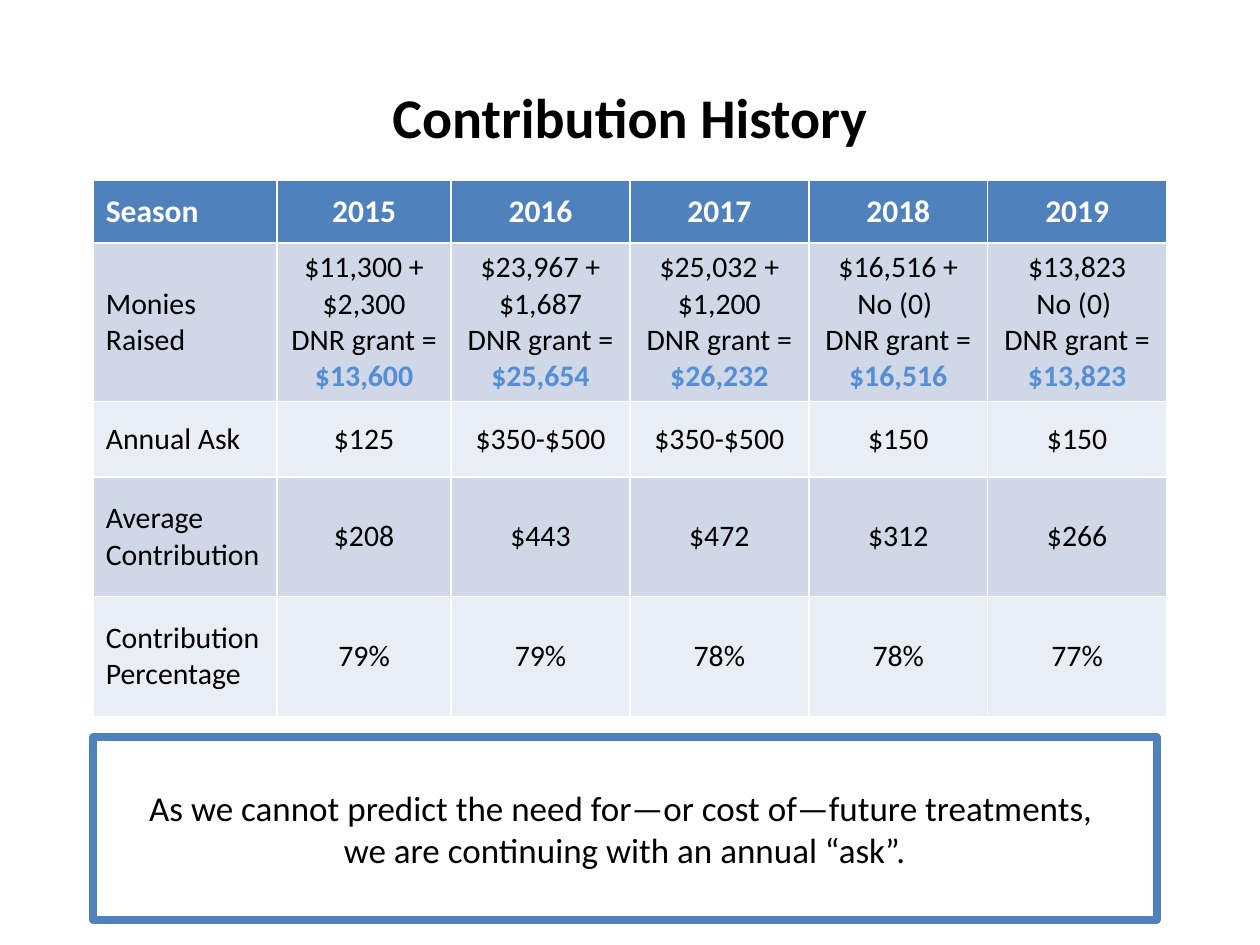
import pptx
import pptx.dml.color
import pptx.enum.shapes
import pptx.enum.text
import pptx.oxml
import pptx.oxml.ns
import pptx.util
from dataclasses import dataclass

Inches = pptx.util.Inches
ALIGN = pptx.enum.text.PP_ALIGN
MIDDLE = pptx.enum.text.MSO_ANCHOR.MIDDLE


@dataclass(frozen=True)
class Theme:
    font: str = "Calibri"
    ink: str = "000000"
    white: str = "FFFFFF"
    blue: str = "4F81BD"
    total: str = "558ED5"
    bands: tuple = ("D0D8E8", "E9EDF4")
    title_size: int = 32
    note_size: int = 20
    header_size: int = 18
    body_size: int = 17


theme = Theme()


def rgb(value):
    return pptx.dml.color.RGBColor.from_string(value)


def add_run(paragraph, text, size, color=theme.ink, bold=False):
    run = paragraph.add_run()
    run.text = text
    run.font.name = theme.font
    run.font.size = pptx.util.Pt(size)
    run.font.bold = bold
    run.font.color.rgb = rgb(color)


deck = pptx.Presentation()
deck.slide_width, deck.slide_height = Inches(10), Inches(7.5)
slide = deck.slides.add_slide(deck.slide_layouts[5])

# Title
title = slide.shapes.title
title.left, title.top = Inches(0.5), Inches(0.3)
title.width, title.height = Inches(9), Inches(1.25)
title.text_frame.vertical_anchor = MIDDLE
heading = title.text_frame.paragraphs[0]
heading.alignment = ALIGN.CENTER
add_run(heading, "Contribution History", theme.title_size, bold=True)

# Note below the table
note = slide.shapes.add_shape(pptx.enum.shapes.MSO_SHAPE.RECTANGLE,
                              Inches(0.74), Inches(5.85), Inches(8.44), Inches(1.45))
note.shadow.inherit = False
note.fill.background()
note.line.color.rgb = rgb(theme.blue)
note.line.width = pptx.util.Pt(4.5)
outline = note._element.spPr.find(pptx.oxml.ns.qn("a:ln"))
outline.append(pptx.oxml.parse_xml(f'<a:round {pptx.oxml.ns.nsdecls("a")}/>'))
note_text = note.text_frame
note_text.word_wrap = True
note_text.vertical_anchor = MIDDLE
note_lines = ["As we cannot predict the need for—or cost of—future treatments, ",
              "we are continuing with an annual “ask”."]
for i, line in enumerate(note_lines):
    paragraph = note_text.paragraphs[0] if i == 0 else note_text.add_paragraph()
    paragraph.alignment = ALIGN.CENTER
    add_run(paragraph, line, theme.note_size)

# Table contents: each cell is a list of lines; the grant line ends with the season total
GRANT = "DNR grant = "
raised = [(["$11,300 + $2,300"], "$13,600"),
          (["$23,967 + $1,687"], "$25,654"),
          (["$25,032 + $1,200"], "$26,232"),
          (["$16,516 +", "No (0) "], "$16,516"),
          (["$13,823", "No (0) "], "$13,823")]
rows = [
    ["Season", "2015", "2016", "2017", "2018", "2019"],
    ["Monies Raised"] + raised,
    ["Annual Ask", "$125", "$350-$500", "$350-$500", "$150", "$150"],
    ["Average Contribution", "$208", "$443", "$472", "$312", "$266"],
    ["Contribution Percentage", "79%", "79%", "78%", "78%", "77%"],
]
column_widths = [1.46, 1.38] + [1.42] * 4
row_heights = [0.5, 1.23, 0.6, 0.95, 0.95]

# Table: the default style supplies the white rules between cells
history = slide.shapes.add_table(len(rows), len(column_widths), Inches(0.74), Inches(1.43),
                                 Inches(sum(column_widths)), Inches(sum(row_heights))).table
for column, width in zip(history.columns, column_widths):
    column.width = Inches(width)
for row, height in zip(history.rows, row_heights):
    row.height = Inches(height)

for r, values in enumerate(rows):
    is_header = r == 0
    for c, value in enumerate(values):
        cell = history.cell(r, c)
        cell.vertical_anchor = MIDDLE
        cell.fill.solid()
        cell.fill.fore_color.rgb = rgb(theme.blue if is_header else theme.bands[(r - 1) % 2])
        sources, total = ([value], None) if isinstance(value, str) else value
        lines = sources + [GRANT] if total else sources
        for i, line in enumerate(lines):
            frame = cell.text_frame
            paragraph = frame.paragraphs[0] if i == 0 else frame.add_paragraph()
            paragraph.alignment = ALIGN.LEFT if c == 0 else ALIGN.CENTER
            add_run(paragraph, line, theme.header_size if is_header else theme.body_size,
                    theme.white if is_header else theme.ink, is_header)
        if total:
            add_run(paragraph, total, theme.body_size, theme.total, True)

deck.save("out.pptx")
